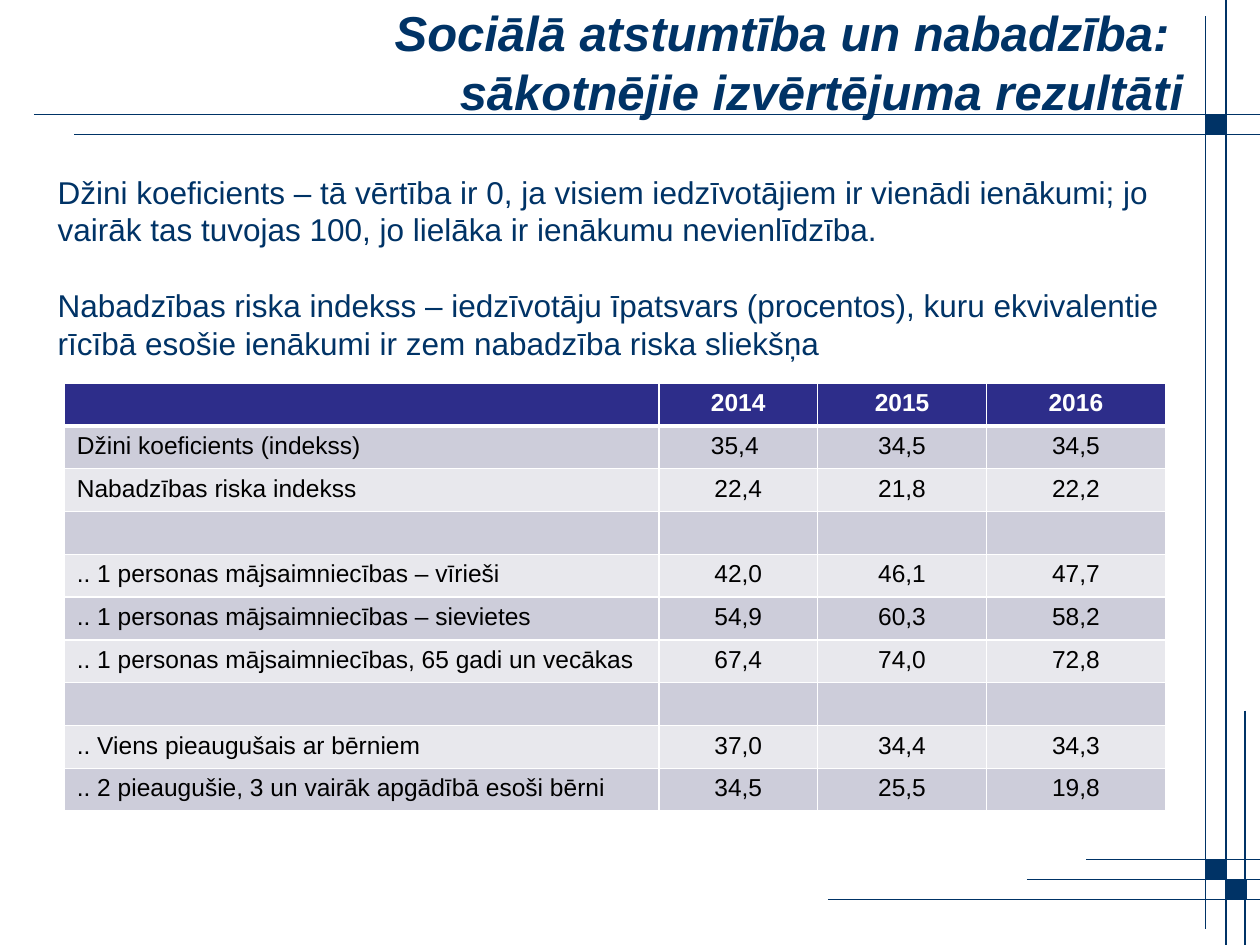
from lxml.etree import SubElement
from pptx import Presentation
from pptx.dml.color import RGBColor
from pptx.enum.shapes import MSO_CONNECTOR, MSO_SHAPE
from pptx.enum.text import MSO_ANCHOR, MSO_AUTO_SIZE, PP_ALIGN
from pptx.oxml.ns import qn
from pptx.util import Inches, Pt

NAVY = RGBColor(0x00, 0x33, 0x66)
INDIGO = RGBColor(0x2D, 0x2D, 0x8A)
BAND_DARK = RGBColor(0xCD, 0xCD, 0xDA)
BAND_LIGHT = RGBColor(0xE8, 0xE8, 0xED)
WHITE = RGBColor(0xFF, 0xFF, 0xFF)
BLACK = RGBColor(0x00, 0x00, 0x00)
FONT = "Arial"
WIDTH, HEIGHT = 10, 7.5

TITLE = "Sociālā atstumtība un nabadzība: \vsākotnējie izvērtējuma rezultāti"
DEFINITIONS = [
    "Džini koeficients – tā vērtība ir 0, ja visiem iedzīvotājiem ir vienādi ienākumi; "
    "jo vairāk tas tuvojas 100, jo lielāka ir ienākumu nevienlīdzība.",
    "Nabadzības riska indekss – iedzīvotāju īpatsvars (procentos), kuru ekvivalentie "
    "rīcībā esošie ienākumi ir zem nabadzība riska sliekšņa",
]
ROWS = [
    ("", "2014", "2015", "2016"),
    ("Džini koeficients (indekss)", "35,4 ", "34,5", "34,5"),
    ("Nabadzības riska indekss", "22,4", "21,8", "22,2"),
    ("", "", "", ""),
    (".. 1 personas mājsaimniecības – vīrieši", "42,0", "46,1", "47,7"),
    (".. 1 personas mājsaimniecības – sievietes", "54,9", "60,3", "58,2"),
    (".. 1 personas mājsaimniecības, 65 gadi un vecākas", "67,4", "74,0", "72,8"),
    ("", "", "", ""),
    (".. Viens pieaugušais ar bērniem", "37,0", "34,4", "34,3"),
    (".. 2 pieaugušie, 3 un vairāk apgādībā esoši bērni", "34,5", "25,5", "19,8"),
]
COL_WIDTHS = [4.72, 1.26, 1.34, 1.42]
ROW_HEIGHT = 0.34

STEP = 0.16
RAIL_X = [9.57, 9.73, 9.88]
TOP_Y = [0.91, 1.07]
BOTTOM_Y = [6.82, 6.98, 7.14]
RAIL_SPANS = [(0.13, 7.37), (0, HEIGHT), (5.64, HEIGHT)]
RULE_STARTS = [0.27, 0.59, 8.62, 8.15, 6.57]
SQUARES = [(RAIL_X[0], TOP_Y[0]), (RAIL_X[0], BOTTOM_Y[0]), (RAIL_X[1], BOTTOM_Y[1])]


def style(font, size, color, bold=False, italic=False):
    font.name, font.size = FONT, Pt(size)
    font.bold, font.italic = bold, italic
    font.color.rgb = color


def add_rule(s, x1, y1, x2, y2):
    line = s.shapes.add_connector(MSO_CONNECTOR.STRAIGHT, *map(Inches, (x1, y1, x2, y2)))
    line.line.color.rgb = NAVY
    line.line.width = Pt(0.75)
    SubElement(line.element.spPr, qn("a:effectLst"))


def add_square(s, x, y):
    sp = s.shapes.add_shape(MSO_SHAPE.RECTANGLE, *map(Inches, (x, y, STEP, STEP)))
    sp.shadow.inherit = False
    sp.fill.solid()
    sp.fill.fore_color.rgb = NAVY
    sp.line.color.rgb = NAVY
    sp.line.width = Pt(0.75)


def add_borders(cell, top, bottom):
    tc_pr = cell._tc.get_or_add_tcPr()
    for tag, points in (("a:lnL", 1), ("a:lnR", 1), ("a:lnT", top), ("a:lnB", bottom)):
        ln = SubElement(tc_pr, qn(tag), w=str(Pt(points)))
        SubElement(SubElement(ln, qn("a:solidFill")), qn("a:srgbClr"), val=str(WHITE))


def fill_cell(cell, text, row, col):
    header = row == 0
    add_borders(cell, 3 if row == 1 else 1, 3 if header else 1)
    cell.fill.solid()
    cell.fill.fore_color.rgb = INDIGO if header else BAND_DARK if row % 2 else BAND_LIGHT
    p = cell.text_frame.paragraphs[0]
    p.alignment = PP_ALIGN.CENTER if col else PP_ALIGN.LEFT
    if text:
        p.text = text
        style(p.runs[0].font, 14, WHITE if header else BLACK, bold=header)
    else:
        SubElement(p._p, qn("a:endParaRPr"), sz="1400")


def add_title(s):
    title = s.shapes.title
    title.left, title.top, title.width, title.height = map(Inches, (0.51, 0.13, 8.98, 0.71))
    tf = title.text_frame
    tf.text = TITLE
    tf.auto_size = MSO_AUTO_SIZE.NONE
    tf.vertical_anchor = MSO_ANCHOR.MIDDLE
    p = tf.paragraphs[0]
    p.alignment = PP_ALIGN.RIGHT
    for r in p.runs:
        style(r.font, 28, NAVY, bold=True, italic=True)


def add_definitions(s):
    tf = s.shapes.add_textbox(*map(Inches, (0.36, 1.32, 9.12, 1.62))).text_frame
    tf.word_wrap = True
    tf.text = "\n".join(DEFINITIONS)
    for i, p in enumerate(tf.paragraphs):
        if i:
            p.space_before = Pt(21.5)
        style(p.runs[0].font, 18, NAVY)


def add_indicators(s):
    size = (0.51, 3.04, sum(COL_WIDTHS), ROW_HEIGHT * len(ROWS))
    table = s.shapes.add_table(len(ROWS), len(COL_WIDTHS), *map(Inches, size)).table
    for column, width in zip(table.columns, COL_WIDTHS):
        column.width = Inches(width)
    for i, values in enumerate(ROWS):
        table.rows[i].height = Inches(ROW_HEIGHT)
        for j, text in enumerate(values):
            fill_cell(table.cell(i, j), text, i, j)


def main():
    prs = Presentation()
    prs.slide_width, prs.slide_height = Inches(WIDTH), Inches(HEIGHT)
    s = prs.slides.add_slide(prs.slide_layouts[5])
    for x, y in zip(RULE_STARTS, TOP_Y + BOTTOM_Y):
        add_rule(s, x, y, WIDTH, y)
    for x, (top, bottom) in zip(RAIL_X, RAIL_SPANS):
        add_rule(s, x, top, x, bottom)
    for x, y in SQUARES:
        add_square(s, x, y)
    add_title(s)
    add_definitions(s)
    add_indicators(s)
    prs.save("out.pptx")


if __name__ == "__main__":
    main()
